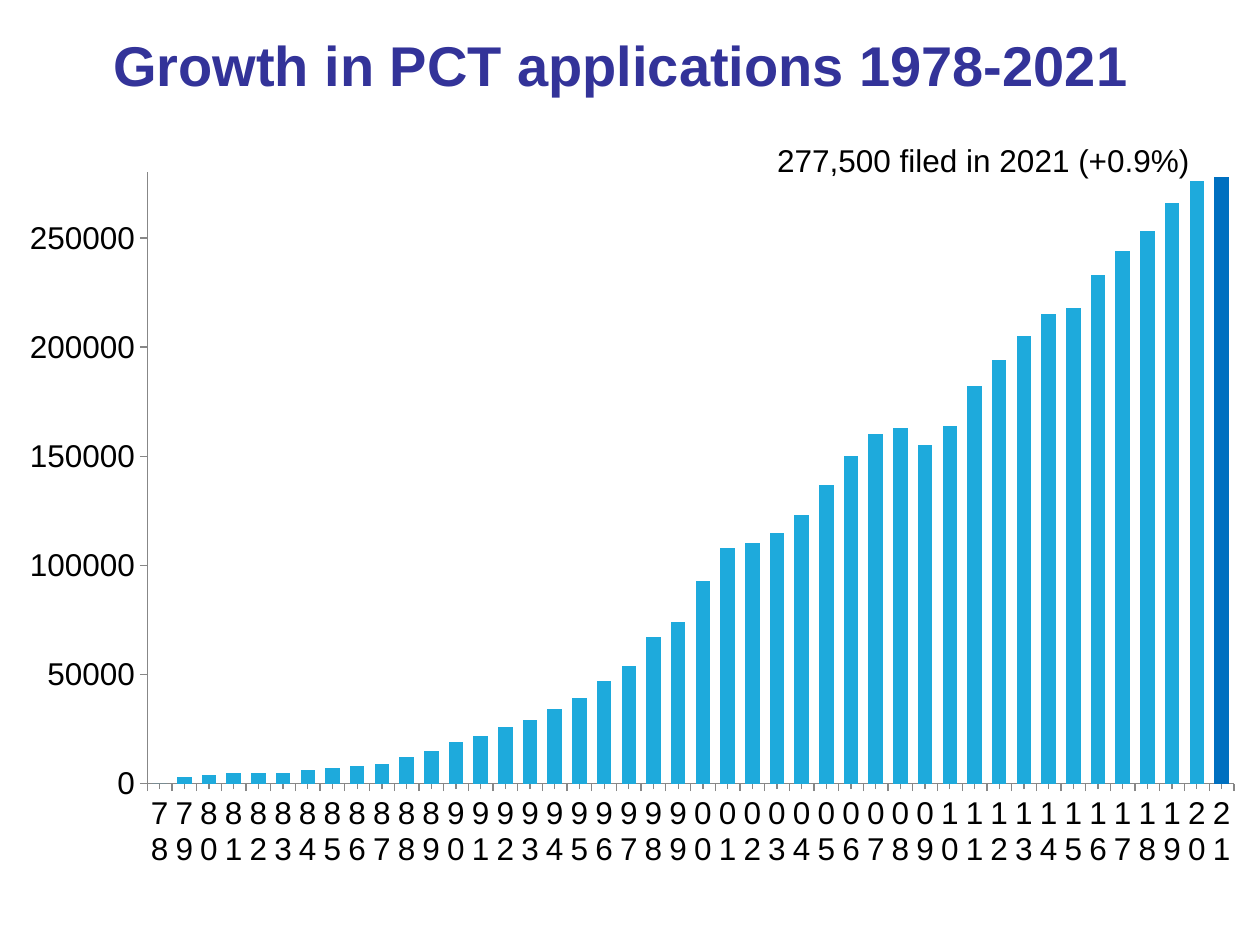
from lxml import etree
from pptx import Presentation
from pptx.chart.data import CategoryChartData
from pptx.dml.color import RGBColor
from pptx.enum.chart import XL_CHART_TYPE, XL_TICK_LABEL_POSITION, XL_TICK_MARK
from pptx.enum.text import MSO_ANCHOR, MSO_AUTO_SIZE, PP_ALIGN
from pptx.oxml.ns import qn
from pptx.util import Inches, Pt

COLOURS = {
    "title": "333399",
    "text": "000000",
    "bar": "1EAADC",
    "latest": "0070C0",
    "axis": "878787",
}
TITLE_FORMAT = {"name": "Arial", "size": Pt(32), "bold": True}
TEXT_FORMAT = {"name": "Arial", "size": Pt(18), "bold": False}

FIRST_YEAR, LAST_YEAR = 1978, 2021
THOUSANDS_FILED = [
    0, 3, 4, 5, 5, 5, 6, 7, 8, 9, 12,
    15, 19, 22, 26, 29, 34, 39, 47, 54, 67, 74,
    93, 108, 110, 115, 123, 137, 150, 160, 163, 155, 164,
    182, 194, 205, 215, 218, 233, 244, 253, 266, 276, 278,
]
PLOT_AREA = {"x": 0.1, "y": 0.16, "w": 0.89, "h": 0.74}


def colour(key):
    return RGBColor.from_string(COLOURS[key])


def format_font(font, values, colour_key):
    for attribute, value in values.items():
        setattr(font, attribute, value)
    font.color.rgb = colour(colour_key)


def place(shape, left, top, width, height):
    shape.left, shape.top = Inches(left), Inches(top)
    shape.width, shape.height = Inches(width), Inches(height)


def set_plot_layout(chart):
    """Fix the inner plot area as fractions of the chart."""
    plot_area = chart._chartSpace.chart.plotArea
    for automatic in plot_area.findall(qn("c:layout")):
        plot_area.remove(automatic)
    layout = etree.Element(qn("c:layout"))
    manual = etree.SubElement(layout, qn("c:manualLayout"))
    settings = {"layoutTarget": "inner", "xMode": "edge", "yMode": "edge", **PLOT_AREA}
    for tag, value in settings.items():
        etree.SubElement(manual, qn(f"c:{tag}")).set("val", str(value))
    plot_area.insert(0, layout)


def format_axis(axis, values):
    for attribute, value in values.items():
        setattr(axis, attribute, value)
    axis.format.line.color.rgb = colour("axis")
    axis.format.line.width = Pt(0.75)
    format_font(axis.tick_labels.font, TEXT_FORMAT, "text")


def add_applications_chart(slide):
    data = CategoryChartData()
    data.categories = [f"{year % 100:02d}" for year in range(FIRST_YEAR, LAST_YEAR + 1)]
    data.add_series("Series 1", [count * 1000 for count in THOUSANDS_FILED])
    chart = slide.shapes.add_chart(
        XL_CHART_TYPE.COLUMN_CLUSTERED,
        Inches(0.2), Inches(0.32), Inches(9.69), Inches(6.56), data,
    ).chart
    chart.has_legend = False
    chart.has_title = False
    format_font(chart.font, TEXT_FORMAT, "text")
    set_plot_layout(chart)

    years, filings = chart.category_axis, chart.value_axis
    format_axis(years, {
        "has_major_gridlines": False,
        "major_tick_mark": XL_TICK_MARK.OUTSIDE,
        "minor_tick_mark": XL_TICK_MARK.OUTSIDE,
        "tick_label_position": XL_TICK_LABEL_POSITION.LOW,
    })
    # Upright labels wrap to one digit per line.
    years._element.find(qn("c:txPr")).find(qn("a:bodyPr")).set("rot", "0")
    format_axis(filings, {
        "has_major_gridlines": False,
        "major_tick_mark": XL_TICK_MARK.OUTSIDE,
        "minor_tick_mark": XL_TICK_MARK.NONE,
        "minimum_scale": 0,
        "maximum_scale": 280000,
        "major_unit": 50000,
    })
    filings.tick_labels.number_format = "0"
    filings.tick_labels.number_format_is_linked = False

    plot = chart.plots[0]
    plot.gap_width = 70
    plot.vary_by_categories = False
    applications = plot.series[0]
    latest = applications.points[len(THOUSANDS_FILED) - 1]
    for bars, key in ((applications, "bar"), (latest, "latest")):
        bars.format.fill.solid()
        bars.format.fill.fore_color.rgb = colour(key)


def add_latest_note(slide):
    note = slide.shapes.add_textbox(Inches(6.07), Inches(1.07), Inches(3.54), Inches(0.4))
    note.text_frame.word_wrap = True
    note.text_frame.auto_size = MSO_AUTO_SIZE.SHAPE_TO_FIT_TEXT
    run = note.text_frame.paragraphs[0].add_run()
    run.text = "277,500 filed in 2021 (+0.9%)"
    format_font(run.font, TEXT_FORMAT, "text")


def fill_title(slide):
    title = slide.shapes.title
    place(title, 0.43, 0.11, 9, 0.8)
    title.text_frame.vertical_anchor = MSO_ANCHOR.MIDDLE
    heading = title.text_frame.paragraphs[0]
    heading.alignment = PP_ALIGN.CENTER
    run = heading.add_run()
    run.text = "Growth in PCT applications 1978-2021"
    format_font(run.font, TITLE_FORMAT, "title")
    # The title lies in front of the chart.
    slide.shapes._spTree.append(title._element)


def main():
    presentation = Presentation()
    presentation.slide_width, presentation.slide_height = Inches(10), Inches(7.5)
    slide = presentation.slides.add_slide(presentation.slide_layouts[5])
    add_applications_chart(slide)
    add_latest_note(slide)
    fill_title(slide)
    presentation.save("out.pptx")


if __name__ == "__main__":
    main()
